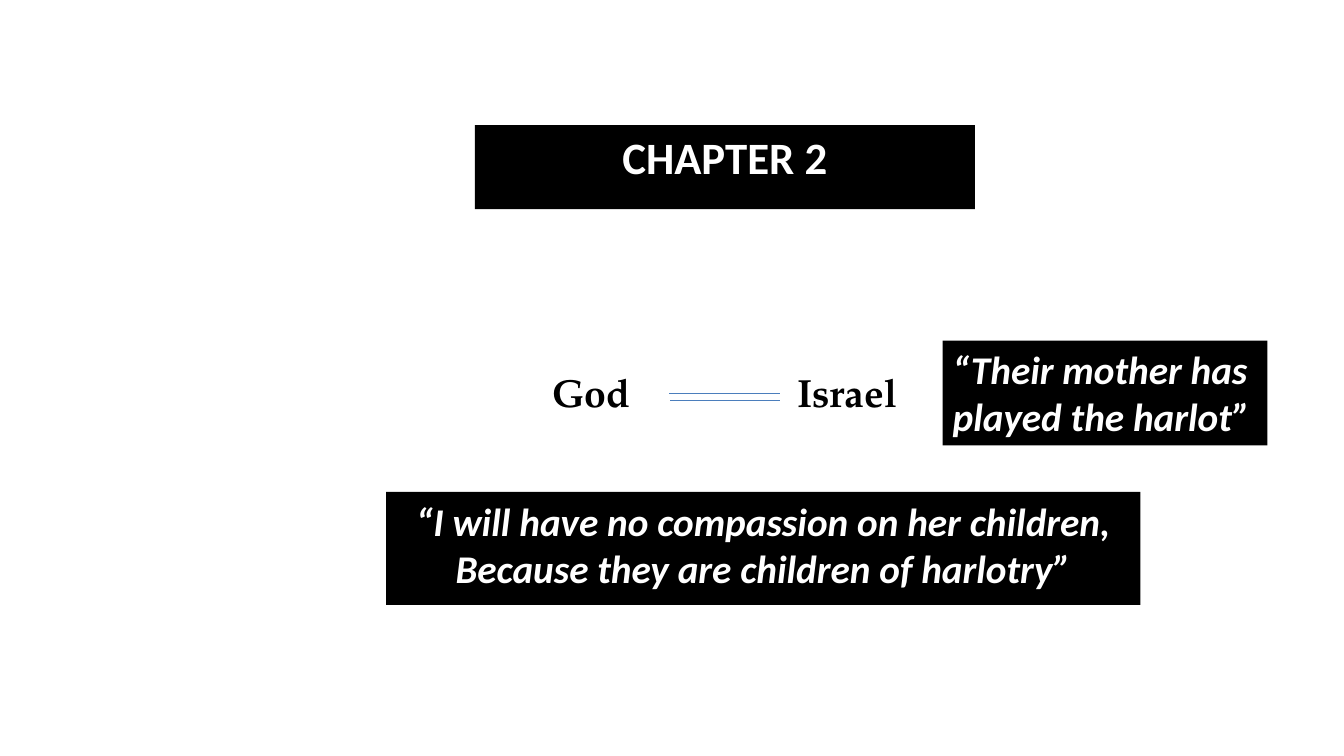
from lxml import etree
from pptx import Presentation
from pptx.dml.color import RGBColor
from pptx.enum.shapes import MSO_CONNECTOR, MSO_SHAPE
from pptx.enum.text import MSO_ANCHOR, MSO_AUTO_SIZE, PP_ALIGN
from pptx.oxml.ns import qn
from pptx.util import Inches, Pt

COLORS = {"black": "000000", "white": "FFFFFF", "line": "4B7EBC"}

TITLE_FONT = {"name": "Calibri", "size": Pt(32), "bold": True, "italic": False}
QUOTE_FONT = {"name": "Calibri", "size": Pt(28), "bold": True, "italic": True}
NAME_FONT = {"name": "TeX Gyre Pagella", "size": Pt(28), "bold": True}


def color(name):
    return RGBColor.from_string(COLORS[name])


def fill_black(shape):
    shape.fill.solid()
    shape.fill.fore_color.rgb = color("black")


def write_text(shape, lines, font_format, font_color, alignment):
    frame = shape.text_frame
    frame.word_wrap = True
    frame.auto_size = MSO_AUTO_SIZE.SHAPE_TO_FIT_TEXT
    frame.vertical_anchor = MSO_ANCHOR.TOP
    frame.text = "\n".join(lines)
    for paragraph in frame.paragraphs:
        paragraph.alignment = alignment
        font = paragraph.runs[0].font
        for attribute, value in font_format.items():
            setattr(font, attribute, value)
        font.color.rgb = color(font_color)


def format_title(slide, text, left, top, width, height):
    title = slide.shapes.title
    title.left, title.top = Inches(left), Inches(top)
    title.width, title.height = Inches(width), Inches(height)
    fill_black(title)
    write_text(title, [text], TITLE_FONT, "white", PP_ALIGN.CENTER)


def add_quote(slide, lines, left, top, width, height, alignment):
    quote = slide.shapes.add_shape(
        MSO_SHAPE.RECTANGLE, Inches(left), Inches(top), Inches(width), Inches(height))
    quote.shadow.inherit = False
    quote.line.fill.background()
    fill_black(quote)
    write_text(quote, lines, QUOTE_FONT, "white", alignment)


def add_names(slide, text, left, top, width, height):
    names = slide.shapes.add_textbox(
        Inches(left), Inches(top), Inches(width), Inches(height))
    write_text(names, [text], NAME_FONT, "black", PP_ALIGN.LEFT)
    # Two columns: the second name flows into the right one
    body = names.text_frame._txBody.find(qn("a:bodyPr"))
    body.set("numCol", "2")
    body.set("spcCol", str(Inches(0.4)))


def add_bond_line(slide, left, right, y):
    line = slide.shapes.add_connector(
        MSO_CONNECTOR.STRAIGHT, Inches(left), Inches(y), Inches(right), Inches(y))
    line.line.color.rgb = color("line")
    line.line.width = Pt(0.75)
    etree.SubElement(line._element.spPr, qn("a:effectLst"))


def main():
    presentation = Presentation()
    presentation.slide_width = Inches(13.33)
    presentation.slide_height = Inches(7.5)
    slide = presentation.slides.add_slide(presentation.slide_layouts[5])

    # Chapter heading
    format_title(slide, "CHAPTER 2", 4.71, 1.24, 4.96, 0.64)

    # Quotations
    add_quote(slide, ["“Their mother has played the harlot”"],
              9.35, 3.38, 3.22, 1.04, PP_ALIGN.LEFT)
    add_quote(slide, ["“I will have no compassion on her children,",
                      "Because they are children of harlotry”"],
              3.83, 4.88, 7.48, 1.12, PP_ALIGN.CENTER)

    # God and Israel, joined by a double line
    add_names(slide, "God \t Israel", 5.38, 3.6, 4.65, 0.57)
    for left, y in ((6.64, 3.9), (6.65, 3.97)):
        add_bond_line(slide, left, 7.74, y)

    presentation.save("out.pptx")


if __name__ == "__main__":
    main()
